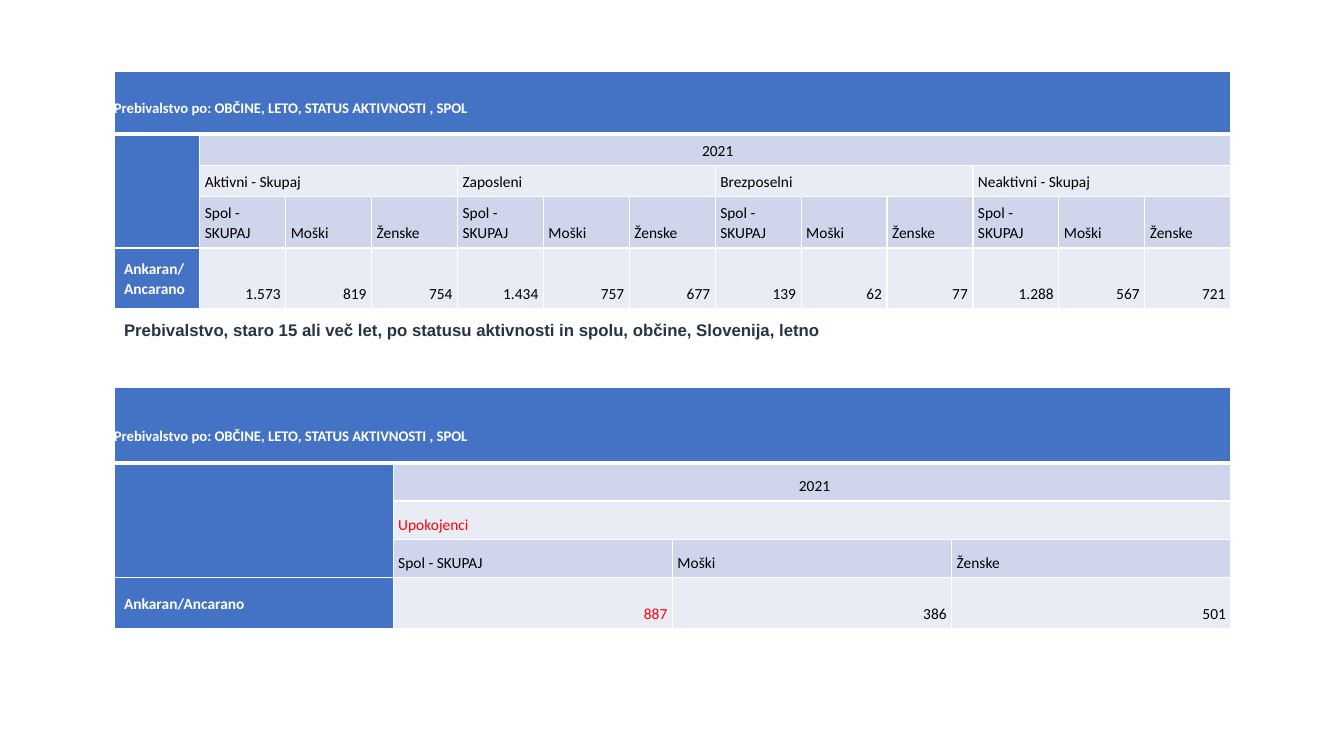
import dataclasses
import pptx
import pptx.dml.color
import pptx.enum.text
import pptx.oxml
import pptx.oxml.ns
import pptx.util
from pptx.util import Inches

ALIGN = pptx.enum.text.PP_ALIGN
ANCHOR = pptx.enum.text.MSO_ANCHOR


@dataclasses.dataclass(frozen=True)
class Theme:
    blue: str = "4472C4"
    band: str = "CFD5EA"
    pale: str = "E9EBF5"
    white: str = "FFFFFF"
    black: str = "000000"
    red: str = "FF0000"
    navy: str = "273443"
    head: float = 10.5
    cell: float = 11
    title: float = 12
    font: str = "Calibri"
    sans: str = "Arial"


THEME = Theme()
HEAD = "Prebivalstvo po: OBČINE, LETO, STATUS AKTIVNOSTI , SPOL"
PLACE = "Ankaran/Ancarano"
YEAR = "2021"
SEXES = ["Spol - SKUPAJ", "Moški", "Ženske"]
CAPTION = ("Prebivalstvo, staro 15 ali več let, po statusu aktivnosti in spolu, "
           "občine, Slovenija, letno")
ACTIVE = {
    "Aktivni - Skupaj": ["1.573", "819", "754"],
    "Zaposleni": ["1.434", "757", "677"],
    "Brezposelni": ["139", "62", "77"],
    "Neaktivni - Skupaj": ["1.288", "567", "721"],
}
RETIRED = {"Upokojenci": ["887", "386", "501"]}


def style(para, size, color, font, bold):
    for run in para.runs:
        run.font.size = pptx.util.Pt(size)
        run.font.name = font
        run.font.bold = bold
        run.font.color.rgb = pptx.dml.color.RGBColor.from_string(color)


def inset(box, left, top, right, bottom):
    box.margin_left, box.margin_top = Inches(left), Inches(top)
    box.margin_right, box.margin_bottom = Inches(right), Inches(bottom)


def edge(cell, row):
    """Draw white cell borders, thicker between the heading row and the next."""
    thick = {(0, "B"), (1, "T")}
    props = cell._tc.get_or_add_tcPr()
    for spot, side in enumerate("LRTB"):
        width = pptx.util.Pt(3 if (row, side) in thick else 1)
        props.insert(spot, pptx.oxml.parse_xml(
            f'<a:ln{side} {pptx.oxml.ns.nsdecls("a")} w="{width}"><a:solidFill>'
            f'<a:srgbClr val="{THEME.white}"/></a:solidFill></a:ln{side}>'))


def write(cell, text, color=THEME.black, align=ALIGN.LEFT, bold=False,
          size=THEME.cell, lead=1.07):
    para = cell.text_frame.paragraphs[0]
    para.text = text
    para.alignment = align
    para.line_spacing = lead
    para.space_after = pptx.util.Pt(8)
    style(para, size, color, THEME.font, bold)


def add_grid(slide, box, rows, groups, accent=THEME.black):
    """Add a table by sex for each group; accent colours names and totals."""
    left, top, width = box
    count = 1 + len(SEXES) * len(groups)
    table = slide.shapes.add_table(
        len(rows), count, Inches(left), Inches(top),
        Inches(width), Inches(sum(rows))).table
    for line, tall in zip(table.rows, rows):
        line.height = Inches(tall)
    for col in table.columns:
        col.width = Inches(width / count)

    for row in range(len(rows)):
        for col in range(count):
            cell = table.cell(row, col)
            cell.fill.solid()
            tone = (THEME.blue if row == 0 or col == 0
                    else THEME.band if row % 2 else THEME.pale)
            cell.fill.fore_color.rgb = pptx.dml.color.RGBColor.from_string(tone)
            cell.vertical_anchor = ANCHOR.BOTTOM
            inset(cell, 0.05, 0.05, 0.05, 0.05)
            edge(cell, row)

    head, year, place = table.cell(0, 0), table.cell(1, 1), table.cell(4, 0)
    head.merge(table.cell(0, count - 1))
    inset(head, 0, 0.16, 0.05, 0.17)
    write(head, HEAD, THEME.white, bold=True, size=THEME.head,
          lead=pptx.util.Pt(21))
    table.cell(1, 0).merge(table.cell(3, 0))
    year.merge(table.cell(1, count - 1))
    year.margin_left = Inches(0.1)
    write(year, YEAR, align=ALIGN.CENTER)
    place.vertical_anchor = ANCHOR.MIDDLE
    inset(place, 0.1, 0.1, 0.1, 0.1)
    write(place, PLACE, THEME.white, bold=True)

    for index, (name, values) in enumerate(groups.items()):
        first = 1 + index * len(SEXES)
        group = table.cell(2, first)
        group.merge(table.cell(2, first + len(SEXES) - 1))
        write(group, name, accent)
        for step, (sex, value) in enumerate(zip(SEXES, values)):
            write(table.cell(3, first + step), sex)
            write(table.cell(4, first + step), value,
                  THEME.black if step else accent, ALIGN.RIGHT)


def add_title(slide, box):
    title = slide.shapes.title
    left, top, width, height = box
    title.left, title.top = Inches(left), Inches(top)
    title.width, title.height = Inches(width), Inches(height)
    frame = title.text_frame
    frame.text = CAPTION
    frame.word_wrap = True
    frame.auto_size = pptx.enum.text.MSO_AUTO_SIZE.NONE
    frame.vertical_anchor = ANCHOR.TOP
    inset(frame, 0.1, 0.01, 0.1, 0.05)
    para = frame.paragraphs[0]
    para.alignment = ALIGN.LEFT
    style(para, THEME.title, THEME.navy, THEME.sans, True)


def main():
    deck = pptx.Presentation()
    deck.slide_width, deck.slide_height = Inches(13.33), Inches(7.5)
    slide = deck.slides.add_slide(deck.slide_layouts.get_by_name("Title Only"))
    left, width = 1.13, 11.08
    add_grid(slide, (left, 3.84, width), [0.75, 0.38, 0.38, 0.38, 0.51],
             RETIRED, THEME.red)
    add_grid(slide, (left, 0.71, width), [0.61, 0.31, 0.31, 0.51, 0.6], ACTIVE)
    add_title(slide, (left, 3.16, width, 0.5))
    deck.save("out.pptx")


if __name__ == "__main__":
    main()
